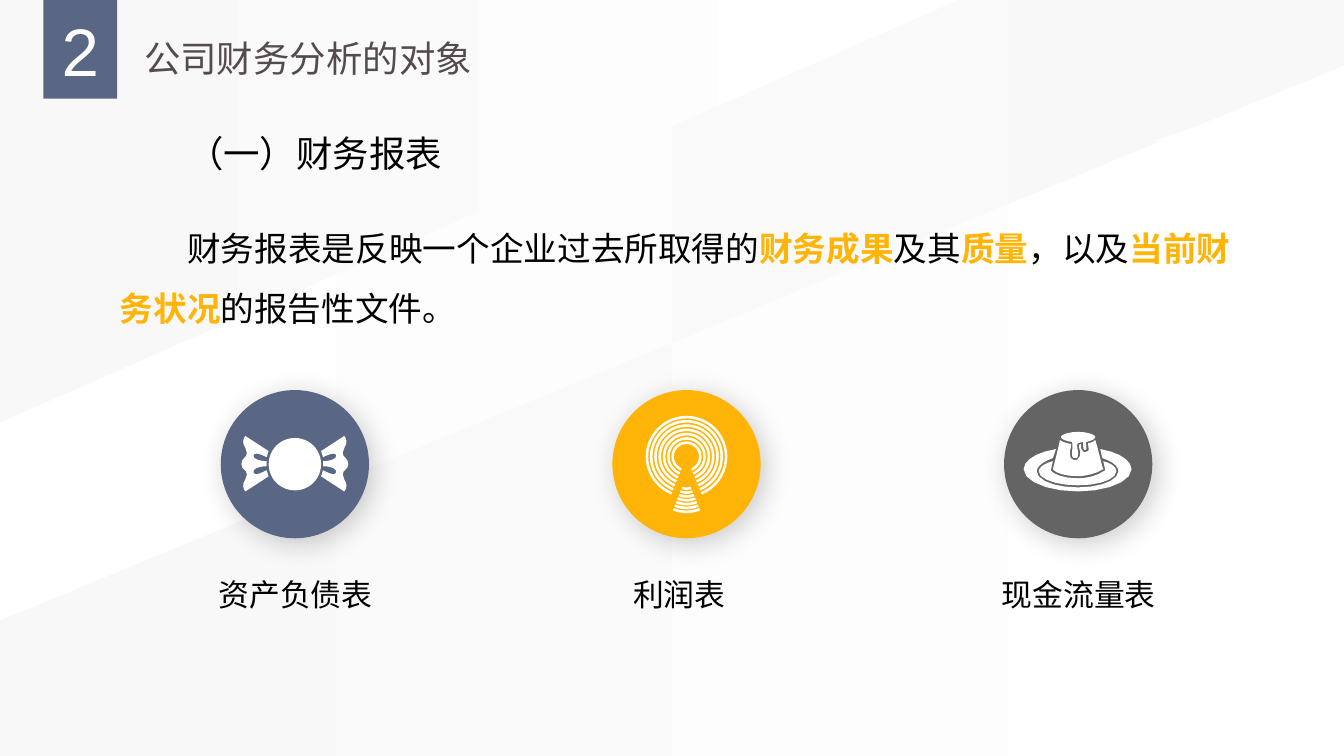
from lxml import etree
from pptx import Presentation
from pptx import util as u
from pptx.dml.color import RGBColor
from pptx.enum import shapes, text
from pptx.oxml.ns import qn

W, H = u.Inches(13.33), u.Inches(7.5)
UNIT = W / 1333  # icon grid
CURVE_STEPS = 5
CJK = "Noto Sans CJK SC"
ALIGN = text.PP_ALIGN
COLORS = {"white": "FFFFFF", "mist": "F8F8F8", "blue": "596784", "amber": "FFB407",
          "gray": "646464", "title": "554B4F", "black": "000000"}

# Reports: colour, label, label left and width (% of slide width), alignment
REPORTS = [("blue", "资产负债表", 11.78, 20.4, ALIGN.CENTER),
           ("amber", "利润表", 46.36, 8.78, ALIGN.JUSTIFY),
           ("gray", "现金流量表", 70.07, 20.4, ALIGN.CENTER)]
FIRST_X, STEP_X, CENTRE_Y, DISC = 21.94, 29.14, 61.4, 11.03

# Icon outlines in icon units: a pair is a line end, six numbers a Bezier curve
WING = [(53, 0), (53, -8, 44, -6, 49, -16), (54, -23, 49, -28, 49, -28), (26, -13),
        (27, -11, 27, -9, 28, -7), (34, -10, 40, -12, 41, -9), (42, -5, 34, -3, 28, -3),
        (28, 2), (34, 2, 42, 4, 41, 8), (40, 12, 34, 9, 28, 6), (27, 8, 27, 10, 26, 12),
        (49, 27), (49, 27, 54, 22, 49, 15), (44, 5, 53, 7, 53, 0)]
PLATE = [(22, -15), (24, -6), (34, -3, 40, 2, 40, 7), (40, 16, 22, 23, 0, 23),
         (-23, 23, -41, 16, -41, 7), (-41, 2, -34, -3, -25, -6), (-22, -15),
         (-41, -12, -54, -4, -54, 5), (-54, 17, -30, 27, 0, 27),
         (29, 27, 53, 17, 53, 5), (53, -4, 40, -12, 22, -15)]
SAUCER = [(-39, 7), (-39, 15, -21, 21, 0, 21), (21, 21, 38, 15, 38, 7),
          (38, 3, 33, -1, 25, -3), (27, 6), (16, 14, 1, 14, 0, 14),
          (-20, 14, -27, 7, -27, 6), (-25, -3), (-33, -1, -39, 3, -39, 7)]
PUDDING = [(-25, 5), (-24, 7, -17, 12, 0, 12), (0, 12, 14, 12, 25, 5),
           (24, 4, 20, -15, 17, -24), (15, -22, 13, -21, 10, -21), (10, -19),
           (10, -17, 11, -15, 10, -13), (9, -13, 8, -12, 7, -12), (6, -12, 5, -12, 5, -13),
           (3, -14, 3, -16, 3, -18), (3, -20), (2, -20), (1, -19), (1, -17, 1, -15, 2, -13),
           (2, -11), (2, -9, 2, -7, 0, -6), (0, -5, -1, -4, -3, -4), (-5, -4, -6, -5, -7, -6),
           (-8, -7, -8, -9, -8, -11), (-8, -14), (-7, -16, -7, -18, -7, -20),
           (-12, -21, -16, -22, -18, -24), (-20, -14, -25, 5, -25, 5)]
ICING = [(17, -27), (17, -29, 10, -32, 0, -32), (-10, -32, -17, -29, -17, -27),
         (-17, -25, -13, -23, -6, -22), (-5, -18, -6, -14, -6, -11), (-6, -8, -6, -6, -3, -6),
         (0, -6, 0, -8, 0, -11), (0, -13, -1, -16, -1, -19), (0, -21),
         (2, -21, 3, -22, 5, -22), (5, -21, 5, -20, 5, -19), (5, -17, 5, -14, 7, -14),
         (9, -14, 8, -18, 8, -20), (8, -22), (13, -23, 17, -25, 17, -27)]


def px(share):
    return round(W * share / 100)


def py(share):
    return round(H * share / 100)


def rgb(name):
    return RGBColor.from_string(COLORS[name])


def paint(sp, *colors):
    """One colour gives a solid fill, two a horizontal gradient."""
    sp.shadow.inherit = False
    sp.line.fill.background()
    if len(colors) == 1:
        sp.fill.solid()
        sp.fill.fore_color.rgb = rgb(colors[0])
    else:
        sp.fill.gradient()
        sp.fill.gradient_angle = 180
        for stop, color in zip(sp.fill.gradient_stops, colors):
            stop.color.rgb = rgb(color)
    return sp


def add_box(s, kind, left, top, width, height, *colors):
    return paint(s.shapes.add_shape(kind, round(left), round(top), round(width),
                                    round(height)), *colors)


def add_round(s, cx, cy, size, color, kind=shapes.MSO_SHAPE.OVAL):
    return add_box(s, kind, cx - size / 2, cy - size / 2, size, size, color)


def add_polygon(s, points, *colors):
    points = [(round(x), round(y)) for x, y in points]
    fb = s.shapes.build_freeform(*points[0])
    fb.add_line_segments(points[1:], close=True)
    return paint(fb.convert_to_shape(), *colors)


def add_outline(s, cx, cy, outline, flip=1):
    points = [outline[0]]
    for step in outline[1:]:
        if len(step) == 2:
            points.append(step)
            continue
        start = points[-1]
        for t in (i / CURVE_STEPS for i in range(1, CURVE_STEPS + 1)):
            weights = (1 - t) ** 3, 3 * t * (1 - t) ** 2, 3 * t * t * (1 - t), t ** 3
            points.append(tuple(sum(w * v for w, v in zip(weights, (start[k], *step[k::2])))
                                for k in (0, 1)))
    add_polygon(s, [(cx + flip * x * UNIT, cy + y * UNIT) for x, y in points], "white")


def add_band(s, cx, cy, radius, start, end):
    """Ring segment 2.5 units thick, angles clockwise from the right."""
    sp = add_round(s, cx, cy, 2 * radius * UNIT, "white", shapes.MSO_SHAPE.BLOCK_ARC)
    for i, value in enumerate((start * 0.6, end * 0.6, 2.5 / (2 * radius))):
        sp.adjustments[i] = value


def add_shadow(sp):
    effects = sp._element.spPr.find(qn("a:effectLst"))
    shadow = etree.SubElement(effects, qn("a:outerShdw"), blurRad=str(u.Pt(20)),
                              dist=str(u.Pt(5)), dir="2700000", algn="tl", rotWithShape="0")
    color = etree.SubElement(shadow, qn("a:srgbClr"), val=COLORS["black"])
    etree.SubElement(color, qn("a:alpha"), val="20000")


def add_text(s, box, runs, size, align=ALIGN.LEFT, font=CJK, wrap=True, inset=True,
             spacing=None, indent=False):
    left, top, width, height = box
    tf = s.shapes.add_textbox(px(left), py(top), px(width), py(height)).text_frame
    tf.word_wrap = wrap
    if not inset:
        tf.margin_left = tf.margin_right = tf.margin_top = tf.margin_bottom = 0
    p = tf.paragraphs[0]
    p.alignment = align
    if spacing:
        p.line_spacing = spacing
    if indent:
        p.space_after = u.Pt(6)
        p._p.get_or_add_pPr().set("indent", str(px(5)))
    for words, color in runs:
        r = p.add_run()
        r.text = words
        r.font.size, r.font.name = u.Pt(size), font
        r.font.bold = color == "amber"
        r.font.color.rgb = rgb(color)
        etree.SubElement(r._r.get_or_add_rPr(), qn("a:ea"), typeface=font)


def add_backdrop(s):
    add_box(s, shapes.MSO_SHAPE.RECTANGLE, 0, 0, W, H, "mist", "white")
    for corners, colors in [
            ([(0, 0), (71.27, 0), (0, 55.87)], ("white", "mist")),
            ([(0, 82.13), (100, 8.67), (100, 100), (0, 100)], ("white", "mist")),
            ([(85.97, 18.67), (100, 9.47), (100, 18.67)], ("white",))]:
        add_polygon(s, [(px(x), py(y)) for x, y in corners], *colors)


def add_candy(s, cx, cy):
    for flip in (1, -1):
        add_outline(s, cx, cy, WING, flip)
    add_round(s, cx, cy, 52 * UNIT, "white")


def add_signal(s, cx, cy):
    for i in range(7):
        add_band(s, cx, cy - 7.5 * UNIT, 40.5 - 4.25 * i, 112, 68)
        add_band(s, cx, cy + 12.5 * UNIT, 36 - 3.8 * i, 68, 112)


def add_dessert(s, cx, cy):
    for outline in (PLATE, SAUCER, PUDDING, ICING):
        add_outline(s, cx, cy, outline)


def main():
    prs = Presentation()
    prs.slide_width, prs.slide_height = W, H
    s = prs.slides.add_slide(prs.slide_layouts[6])
    add_backdrop(s)

    # Header
    add_text(s, (9.98, 2.4, 26.1, 8.27), [("公司财务分析的对象", "title")], 26,
             wrap=False, spacing=1.3)
    add_box(s, shapes.MSO_SHAPE.RECTANGLE, px(3.23), 0, px(5.48), py(13.07), "blue")
    add_text(s, (3.23, 1.2, 5.48, 10.8), [("2", "white")], 48, ALIGN.CENTER, "Arial",
             inset=False)

    # Definition
    add_text(s, (8.18, 16.67, 26.5, 7.2), [("（一）财务报表", "black")], 26,
             ALIGN.JUSTIFY, indent=True)
    add_text(s, (8.18, 26.8, 84.1, 16.67),
             [("财务报表是反映一个企业过去所取得的", "black"), ("财务成果", "amber"),
              ("及其", "black"), ("质量", "amber"), ("，以及", "black"),
              ("当前财务状况", "amber"), ("的报告性文件。", "black")],
             24, ALIGN.JUSTIFY, spacing=1.5, indent=True)

    # Three reports
    icons = (add_candy, add_signal, add_dessert)
    for i, (color, label, left, width, align) in enumerate(REPORTS):
        cx, cy = px(FIRST_X + i * STEP_X), py(CENTRE_Y)
        add_shadow(add_round(s, cx, cy, px(DISC), color))
        icons[i](s, cx, cy)
        add_text(s, (left, 75.47, width, 6.27), [(label, "black")], 22, align)

    prs.save("out.pptx")


if __name__ == "__main__":
    main()
